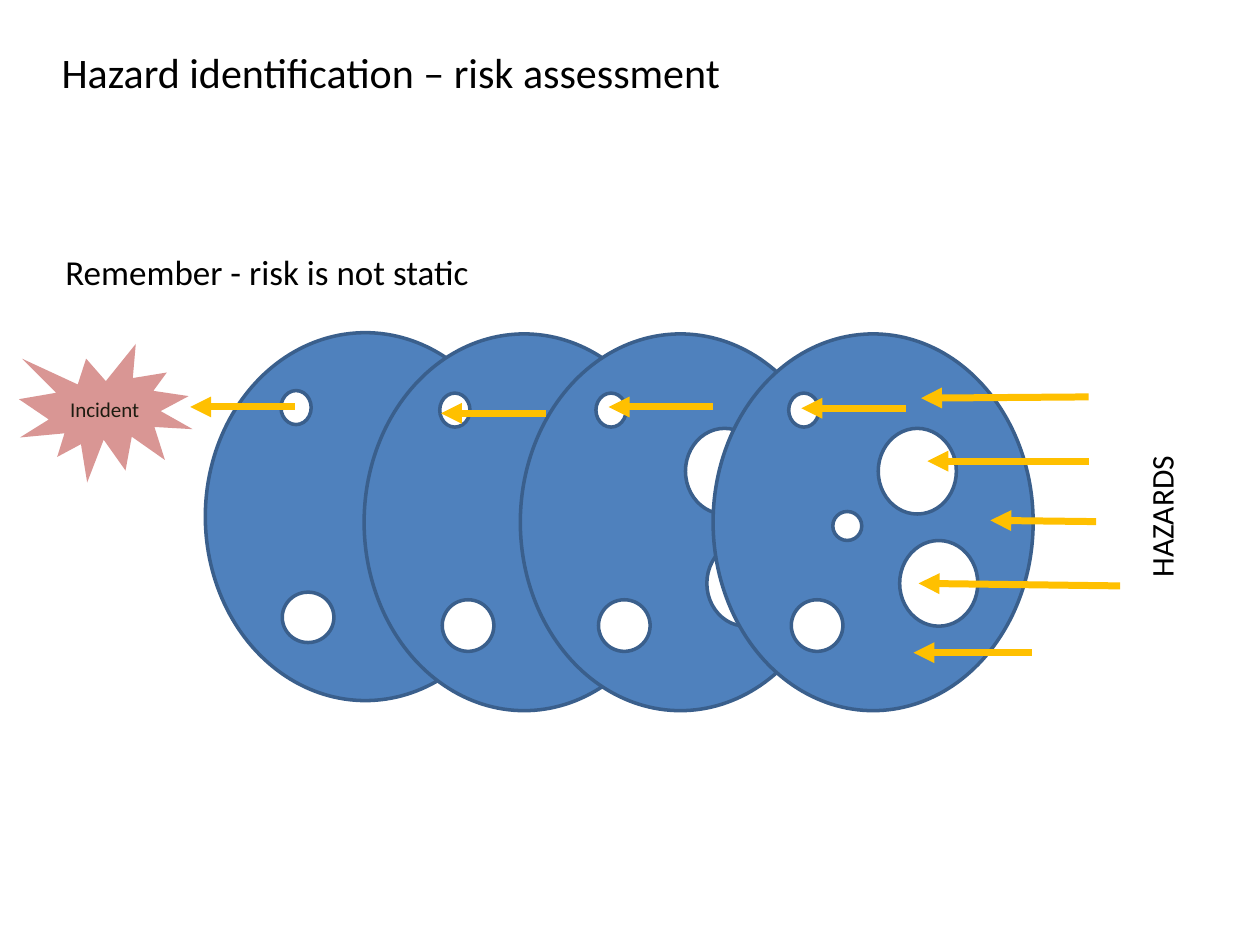
from lxml import etree
from pptx import Presentation
from pptx import util as u
from pptx.dml.color import RGBColor
from pptx.enum import shapes, text
from pptx.oxml.ns import qn

BLUE = RGBColor(0x4F, 0x81, 0xBD)
OUTLINE = RGBColor(0x3A, 0x5F, 0x8C)
WHITE = RGBColor(0xFF, 0xFF, 0xFF)
AMBER = RGBColor(0xFF, 0xC0, 0x00)
PINK = RGBColor(0xD9, 0x96, 0x94)
BLACK = RGBColor(0, 0, 0)
DARK = RGBColor(0x1E, 0x1C, 0x11)

MIDDLE, TOP = text.MSO_ANCHOR.MIDDLE, text.MSO_ANCHOR.TOP
LEFT, CENTER = text.PP_ALIGN.LEFT, text.PP_ALIGN.CENTER
SHAPE = shapes.MSO_SHAPE

LABELS = [
    ("HAZARDS", (7.76, 3.9, 2.91, 0.4), 18, CENTER, TOP, 270),
    ("Remember - risk is not static", (0.42, 1.53, 9, 1.25), 20, LEFT, MIDDLE, 0),
    ("Hazard identification – risk assessment", (0.39, 0.32, 9, 0.71), 24, LEFT, TOP, 0),
]

FIRST_HOLES = [(0.6, 0.46, 0.24, 0.27), (1.47, 0.73, 0.46, 0.53), (0.61, 2.06, 0.41, 0.4)]
HOLES = [(0.6, 0.47, 0.24, 0.27), (1.31, 0.75, 0.62, 0.68),
         (0.62, 2.11, 0.41, 0.41), (1.48, 1.64, 0.62, 0.68)]
EXTRA_HOLE = (0.95, 1.41, 0.23, 0.23)
BARRIER_WIDTH = 2.54
BARRIERS = [
    (1.63, 2.64, 2.92, FIRST_HOLES),
    (2.89, 2.65, 2.99, HOLES),
    (4.13, 2.65, 2.99, HOLES),
    (5.66, 2.65, 2.99, HOLES + [EXTRA_HOLE]),
]

HAZARD_ARROWS = [
    (8.64, 3.66, 7.36, 3.66), (8.89, 4.65, 7.29, 4.63), (8.7, 4.14, 7.86, 4.13),
    (8.64, 3.15, 7.31, 3.16), (8.19, 5.18, 7.25, 5.18),
]
PASSAGE_LENGTH = 0.83
PASSAGE_TIPS = [(1.51, 3.23), (3.5, 3.28), (4.83, 3.23), (6.36, 3.24)]


def inches(lengths):
    return [u.Inches(length) for length in lengths]


def add_filled(parent, kind, area, fill, line=None):
    shape = parent.shapes.add_shape(kind, *inches(area))
    shape.shadow.inherit = False
    shape.fill.solid()
    shape.fill.fore_color.rgb = fill
    if line is None:
        shape.line.fill.background()
    else:
        shape.line.color.rgb = line
        shape.line.width = u.Pt(2)
    return shape


def add_arrow(parent, ends):
    arrow = parent.shapes.add_connector(shapes.MSO_CONNECTOR.STRAIGHT, *inches(ends))
    arrow.line.color.rgb = AMBER
    arrow.line.width = u.Pt(4)
    etree.SubElement(arrow.line._get_or_add_ln(), qn("a:tailEnd"), type="triangle")
    etree.SubElement(arrow._element.spPr, qn("a:effectLst"))


def write(box, words, size, color, align, anchor):
    frame = box.text_frame
    frame.text = words
    frame.vertical_anchor = anchor
    para = frame.paragraphs[0]
    para.alignment = align
    font = para.runs[0].font
    font.name, font.size, font.color.rgb = "Calibri", u.Pt(size), color


def add_barrier(page, left, top, height, holes):
    barrier = page.shapes.add_group_shape()
    add_filled(barrier, SHAPE.OVAL, (left, top, BARRIER_WIDTH, height), BLUE, OUTLINE)
    for dx, dy, wide, high in holes:
        add_filled(barrier, SHAPE.OVAL, (left + dx, top + dy, wide, high), WHITE, OUTLINE)


def main():
    deck = Presentation()
    deck.slide_width, deck.slide_height = inches((10, 7.5))
    page = deck.slides.add_slide(deck.slide_layouts[6])

    for barrier in BARRIERS:
        add_barrier(page, *barrier)
    for ends in HAZARD_ARROWS:
        add_arrow(page, ends)

    for words, area, size, align, anchor, turn in LABELS:
        box = page.shapes.add_textbox(*inches(area))
        box.text_frame.word_wrap = True
        box.rotation = turn
        write(box, words, size, BLACK, align, anchor)

    outcome = page.shapes.add_group_shape()
    burst = add_filled(outcome, SHAPE.EXPLOSION1, (0.15, 2.73, 1.38, 1.1), PINK)
    write(burst, "Incident", 12, DARK, CENTER, MIDDLE)
    burst.text_frame.margin_left = burst.text_frame.margin_right = 0
    for x, y in PASSAGE_TIPS:
        add_arrow(outcome, (x + PASSAGE_LENGTH, y, x, y))

    deck.save("out.pptx")


if __name__ == "__main__":
    main()
